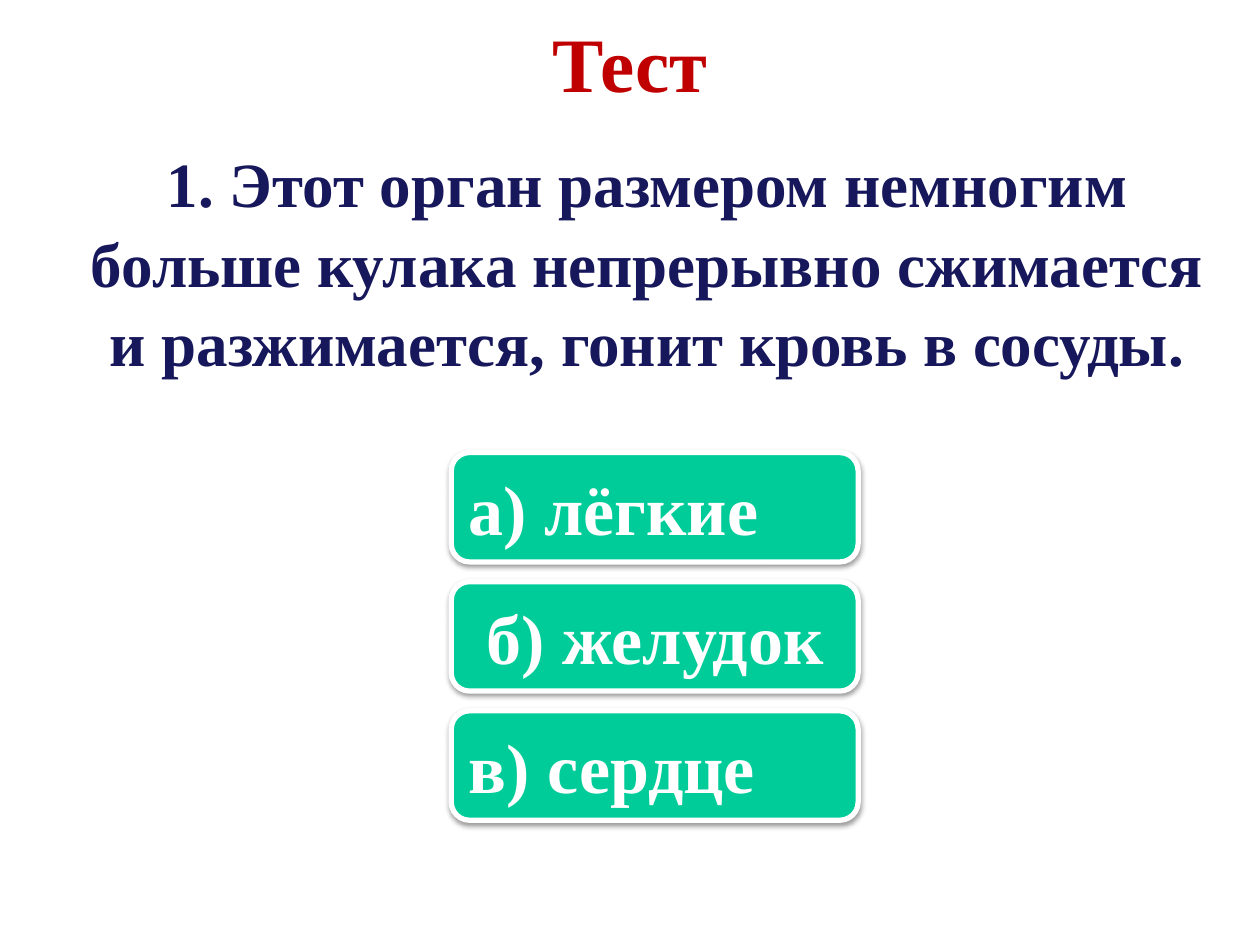
from dataclasses import dataclass

from lxml import etree
from pptx import Presentation
from pptx import util as u
from pptx.dml.color import RGBColor
from pptx.enum import shapes, text
from pptx.oxml import ns

FONT = "Times New Roman"
RED = RGBColor(0xC0, 0x00, 0x00)
NAVY = RGBColor(0x17, 0x17, 0x5C)
GREEN = RGBColor(0x00, 0xCC, 0x99)
WHITE = RGBColor(0xFF, 0xFF, 0xFF)
BLACK = RGBColor(0x00, 0x00, 0x00)


@dataclass
class Box:
    left: float
    top: float
    width: float
    height: float

    def lengths(self) -> list[u.Length]:
        return [u.Pt(v) for v in (self.left, self.top, self.width, self.height)]


@dataclass
class Label:
    words: str
    size: float
    color: RGBColor
    align: text.PP_ALIGN = text.PP_ALIGN.CENTER
    anchor: text.MSO_ANCHOR = text.MSO_ANCHOR.MIDDLE
    spacing: float = 1.0


def write(sp, label: Label) -> None:
    tf = sp.text_frame
    tf.word_wrap = True
    tf.vertical_anchor = label.anchor
    p = tf.paragraphs[0]
    p.alignment = label.align
    p.line_spacing = label.spacing
    r = p.add_run()
    r.text = label.words
    r.font.name = FONT
    r.font.size = u.Pt(label.size)
    r.font.bold = True
    r.font.color.rgb = label.color


def add_text(s, box: Box, label: Label) -> None:
    write(s.shapes.add_textbox(*box.lengths()), label)


def add_shadow(sp) -> None:
    """Soft shadow falling straight down."""
    sp.shadow.inherit = False
    effects = sp._element.spPr.find(ns.qn("a:effectLst"))
    shadow = etree.SubElement(
        effects, ns.qn("a:outerShdw"), blurRad=str(u.Pt(3.1)),
        dist=str(u.Pt(1.6)), dir="5400000", rotWithShape="0")
    color = etree.SubElement(shadow, ns.qn("a:srgbClr"), val=str(BLACK))
    etree.SubElement(color, ns.qn("a:alpha"), val="38000")


def add_answer(s, box: Box, words: str) -> None:
    sp = s.shapes.add_shape(
        shapes.MSO_SHAPE.ROUNDED_RECTANGLE, *box.lengths())
    sp.fill.solid()
    sp.fill.fore_color.rgb = GREEN
    sp.line.color.rgb = WHITE
    sp.line.width = u.Pt(3)
    add_shadow(sp)
    write(sp, Label(words, 40, WHITE, text.PP_ALIGN.LEFT))


def main() -> None:
    prs = Presentation()
    prs.slide_width, prs.slide_height = u.Pt(720), u.Pt(540)
    s = prs.slides.add_slide(prs.slide_layouts[6])

    # Title and question
    add_text(s, Box(76.5, 0, 567, 71), Label("Тест", 44, RED))
    question = ("1. Этот орган размером немногим больше кулака непрерывно "
                "сжимается и разжимается, гонит кровь в сосуды.")
    add_text(s, Box(42.5, 77, 654.5, 138),
             Label(question, 36, NAVY, anchor=text.MSO_ANCHOR.TOP,
                   spacing=1.05))

    # Answers, one below another
    for i, words in enumerate(("а) лёгкие", " б) желудок", "в) сердце")):
        add_answer(s, Box(257.9, 258.6 + i * 73.8, 232.5, 62.5), words)

    prs.save("out.pptx")


if __name__ == "__main__":
    main()
